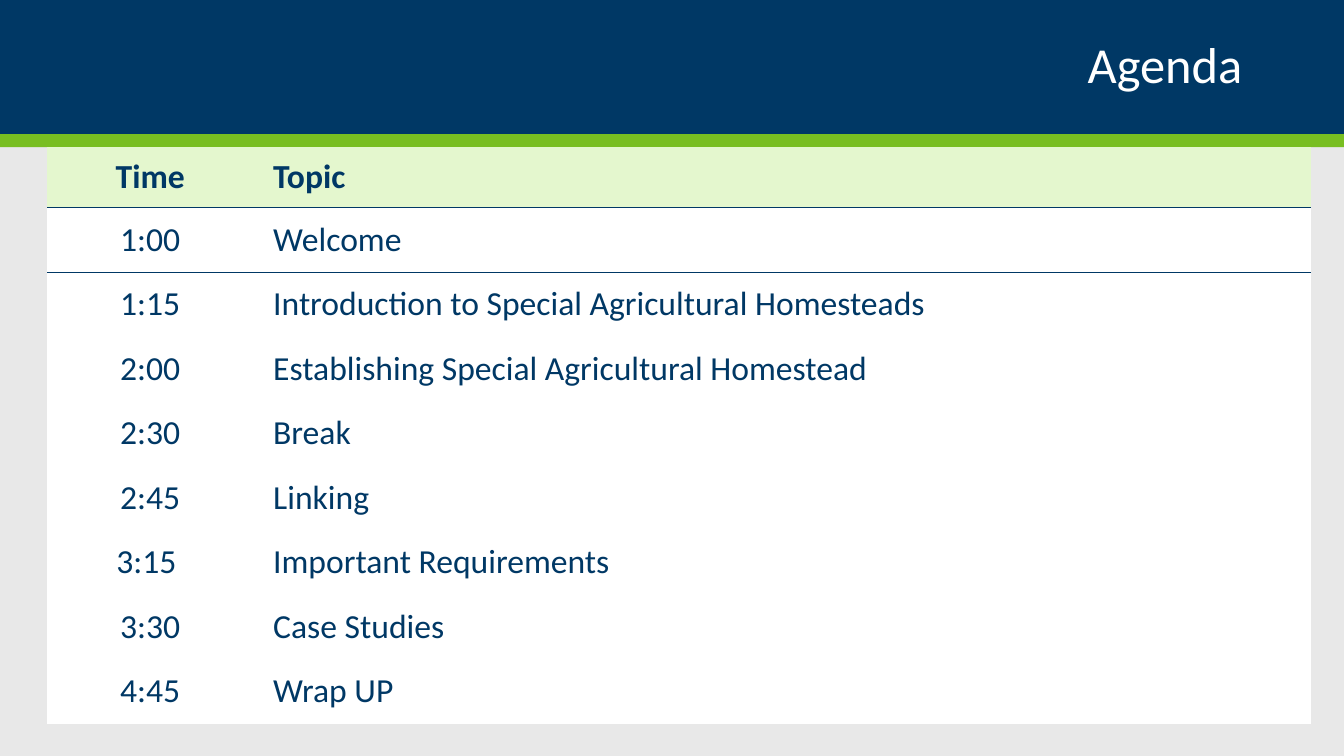
from dataclasses import dataclass

from lxml.etree import SubElement
from pptx import Presentation
from pptx.dml.color import RGBColor
from pptx.enum.shapes import MSO_SHAPE
from pptx.enum.text import MSO_ANCHOR, PP_ALIGN
from pptx.oxml.ns import qn
from pptx.util import Inches, Pt


@dataclass(frozen=True)
class Theme:
    font: str = "Calibri"
    navy: str = "003865"
    green: str = "78BE21"
    pale_green: str = "E4F7CE"
    white: str = "FFFFFF"
    grey: str = "E8E8E8"
    title_size: int = 36
    body_size: int = 24
    no_grid: str = "{2D5ABB26-0587-4C30-8999-92F81FD0307C}"


class Deck:
    def __init__(self, theme):
        self.theme = theme
        self.prs = Presentation()
        self.prs.slide_width = Inches(13.33)
        self.prs.slide_height = Inches(7.5)
        self.s = self.prs.slides.add_slide(self.prs.slide_layouts[6])
        self.fill(self.s.background.fill, theme.grey)

    def fill(self, fill, color):
        fill.solid()
        fill.fore_color.rgb = RGBColor.from_string(color)

    def text(self, tf, text, size, color, align, bold=False):
        tf.text = text
        p = tf.paragraphs[0]
        p.alignment = align
        font = p.runs[0].font
        font.name = self.theme.font
        font.size = Pt(size)
        font.bold = bold
        font.color.rgb = RGBColor.from_string(color)
        return p

    def band(self, top, height, color):
        sp = self.s.shapes.add_shape(
            MSO_SHAPE.RECTANGLE, 0, Inches(top), self.prs.slide_width, Inches(height))
        sp.shadow.inherit = False
        self.fill(sp.fill, color)
        sp.line.fill.background()

    def title(self, text, left, top, width, height):
        sp = self.s.shapes.add_textbox(
            Inches(left), Inches(top), Inches(width), Inches(height))
        tf = sp.text_frame
        tf.word_wrap = True
        tf.vertical_anchor = MSO_ANCHOR.MIDDLE
        p = self.text(tf, text, self.theme.title_size, self.theme.white, PP_ALIGN.RIGHT)
        p.line_spacing = 0.9

    def rule(self, cell, edge):
        ln = SubElement(cell._tc.get_or_add_tcPr(), qn(f"a:{edge}"), w=str(Pt(1)))
        color = SubElement(ln, qn("a:solidFill"))
        SubElement(color, qn("a:srgbClr"), val=self.theme.navy)

    def table(self, rows, left, top, widths, header_height, row_height):
        heights = [header_height] + [row_height] * (len(rows) - 1)
        frame = self.s.shapes.add_table(
            len(rows), len(widths), Inches(left), Inches(top),
            Inches(sum(widths)), Inches(sum(heights)))
        tbl = frame.table
        tbl.horz_banding = False
        tbl._tbl.tblPr.find(qn("a:tableStyleId")).text = self.theme.no_grid
        for col, width in zip(tbl.columns, widths):
            col.width = Inches(width)
        for i, (row, height) in enumerate(zip(rows, heights)):
            tbl.rows[i].height = Inches(height)
            for j, text in enumerate(row):
                self.cell(tbl.cell(i, j), text, i, j)

    def cell(self, cell, text, i, j):
        header = i == 0
        cell.vertical_anchor = MSO_ANCHOR.MIDDLE
        cell.margin_left = Inches(0.2 if j else 0.1)
        cell.margin_right = Inches(0.1)
        cell.margin_top = cell.margin_bottom = Inches(0.05 if header else 0.1)
        if i < 2:
            self.rule(cell, "lnB" if header else "lnT")
        self.fill(cell.fill, self.theme.pale_green if header else self.theme.white)
        self.text(cell.text_frame, text, self.theme.body_size, self.theme.navy,
                  PP_ALIGN.LEFT if j else PP_ALIGN.CENTER, bold=header)


AGENDA = [
    ("Time", "Topic"),
    ("1:00", "Welcome"),
    ("1:15", "Introduction to Special Agricultural Homesteads"),
    ("2:00", "Establishing Special Agricultural Homestead"),
    ("2:30", "Break"),
    ("2:45", "Linking"),
    ("3:15 ", "Important Requirements"),
    ("3:30", "Case Studies"),
    ("4:45", "Wrap UP"),
]


def main():
    theme = Theme()
    deck = Deck(theme)
    deck.band(0, 1.33, theme.navy)
    deck.band(1.33, 0.13, theme.green)
    deck.title("Agenda", 0.92, 0.17, 11.5, 1)
    deck.table(AGENDA, 0.47, 1.46, (2.04, 10.49), 0.6, 0.64)
    deck.prs.save("out.pptx")


if __name__ == "__main__":
    main()
